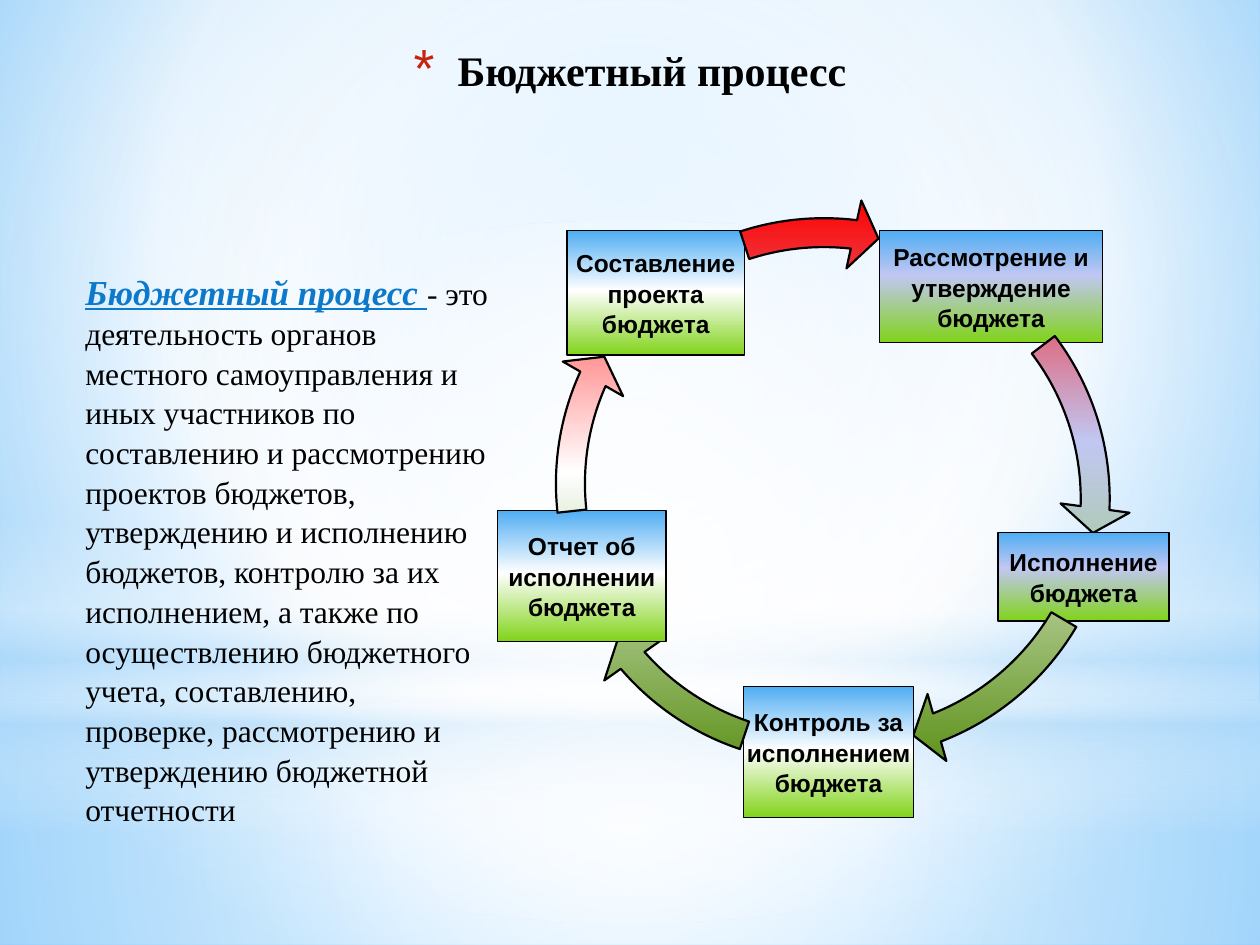
from dataclasses import dataclass

from lxml.etree import SubElement
from pptx import Presentation
from pptx.dml.color import RGBColor
from pptx.enum.shapes import MSO_SHAPE as Preset
from pptx.enum.text import MSO_ANCHOR as Anchor, MSO_AUTO_SIZE as AutoSize, PP_ALIGN as Align
from pptx.oxml.ns import qn
from pptx.util import Cm, Pt


@dataclass(frozen=True)
class Theme:
    serif: str = "Times New Roman"
    sans: str = "Arial"
    ink: str = "000000"
    accent: str = "0D79CA"
    bullet: str = "C3260C"
    title_size: int = 24
    term_size: int = 20
    body_size: int = 18
    label_size: int = 14
    # Gradient stops: position %, colour, optional opacity %
    page: tuple = ((0, "9ED5FF"), (60, "FFFFFF"), (100, "5BB9FF"))
    lower_glow: tuple = ((0, "FFFFFF", 91), (37, "FFFFFF", 76), (100, "B4DCFA", 79))
    upper_glow: tuple = ((0, "FFFFFF", 89), (48, "FFFFFF", 62), (100, "B4DCFA", 79))
    horizon: tuple = ((0, "FFFFFF", 0), (29, "FFFFFF", 30), (45, "B4DCFA", 40),
                      (55, "FFFFFF", 26), (65, "B4DCFA", 60), (100, "FFFFFF", 0))
    halo: tuple = ((0, "FFFFFF", 100), (56, "FFFFFF", 0))
    lilac_box: tuple = ((0, "4FADF3"), (40, "C1C7F2"), (100, "81D31A"))
    white_box: tuple = ((0, "4FADF3"), (48, "FFFFFF"), (100, "81D31A"))
    lilac_arrow: tuple = ((0, "FF0000"), (40, "C1C7F2"), (100, "81D31A"))
    white_arrow: tuple = ((0, "FF0000"), (40, "FFFFFF"), (100, "568D11"))
    pale_arrow: tuple = ((0, "FF0000"), (48, "FFFFFF"), (100, "568D11"))
    blue_arrow: tuple = ((0, "FF0000"), (49, "B4DCFA"), (100, "568D11"))


THEME = Theme()
CENTRE = (50, 50, 50, 50)
RING_SIZE = 11.68

# Label, box place, box fill, then the arrow to the next stage:
# ring corner, start and end angle in degrees, fill
STAGES = (
    ("Рассмотрение и утверждение бюджета", (17.73, 4.65, 4.5, 2.26), THEME.lilac_box,
     (11.1, 4.22), 322.79, 2.05, THEME.lilac_arrow),
    ("Исполнение бюджета", (20.12, 10.74, 3.45, 1.78), THEME.lilac_box,
     (11.18, 4.04), 30.54, 68.67, THEME.white_arrow),
    ("Контроль за исполнением бюджета", (14.99, 13.84, 3.43, 2.64), THEME.white_box,
     (10.8, 4.11), 108.51, 139.11, THEME.white_arrow),
    ("Отчет об исполнении бюджета", (10.03, 10.29, 3.4, 2.64), THEME.white_box,
     (10.8, 3.91), 173.8, 204.26, THEME.pale_arrow),
    ("Составление проекта бюджета", (11.43, 4.65, 3.58, 2.51), THEME.white_box,
     (10.77, 3.99), 251.91, 276.77, THEME.blue_arrow),
)

DEFINITION = (
    "- это деятельность органов местного самоуправления и иных участников по составлению "
    "и рассмотрению проектов бюджетов, утверждению и исполнению бюджетов, контролю за их "
    "исполнением, а также по осуществлению бюджетного учета, составлению, проверке, "
    "рассмотрению и утверждению бюджетной отчетности"
)


def paint_gradient(owner, fill, stops, focus=None):
    """Fill with stops: downwards, or round the focus rectangle (l, t, r, b in %)."""
    fill.gradient()
    gradient = next(owner.iter(qn("a:gradFill")))
    for child in list(gradient):
        gradient.remove(child)
    stop_list = SubElement(gradient, qn("a:gsLst"))
    for position, color, *opacity in stops:
        stop = SubElement(stop_list, qn("a:gs"), pos=str(position * 1000))
        tint = SubElement(stop, qn("a:srgbClr"), val=color)
        if opacity:
            SubElement(tint, qn("a:alpha"), val=str(opacity[0] * 1000))
    if focus:
        path = SubElement(gradient, qn("a:path"), path="circle")
        sides = {side: str(share * 1000) for side, share in zip("ltrb", focus)}
        SubElement(path, qn("a:fillToRect"), **sides)
    else:
        SubElement(gradient, qn("a:lin"), ang="5400000", scaled="0")


def add_gradient_shape(page, preset, place, stops, focus=None, line_width=None):
    shape = page.shapes.add_shape(preset, *map(Cm, place))
    shape.shadow.inherit = False
    paint_gradient(shape._element.spPr, shape.fill, stops, focus)
    if line_width:
        shape.line.color.rgb = RGBColor.from_string(THEME.ink)
        shape.line.width = Pt(line_width)
    else:
        shape.line.fill.background()
    return shape


def add_span(para, text, font, size, color=THEME.ink, bold=False, italic=False, underline=False):
    span = para.add_run()
    span.text = text
    span.font.name = font
    span.font.size = Pt(size)
    span.font.color.rgb = RGBColor.from_string(color)
    span.font.bold = bold
    span.font.italic = italic
    span.font.underline = underline


def add_backdrop(page):
    paint_gradient(page._element, page.background.fill, THEME.page, (20, 10, 20, 60))
    add_gradient_shape(page, Preset.RECTANGLE, (0, 14.17, 25.4, 4.88), THEME.lower_glow, CENTRE)
    add_gradient_shape(page, Preset.RECTANGLE, (0, 0, 25.4, 14.17), THEME.upper_glow, CENTRE)
    add_gradient_shape(page, Preset.RECTANGLE, (0, 10.46, 25.4, 6.35), THEME.horizon)
    add_gradient_shape(page, Preset.OVAL, (0, 4.45, 25.4, 14.17), THEME.halo, CENTRE)


def format_title(page, text):
    title = page.shapes.title
    page.shapes._spTree.append(title._element)  # in front of the backdrop
    title.left, title.top, title.width, title.height = map(Cm, (1.27, 0.76, 22.86, 1.98))
    frame = title.text_frame
    frame.vertical_anchor = Anchor.TOP
    frame.auto_size = AutoSize.NONE
    para = frame.paragraphs[0]
    para.alignment = Align.CENTER
    add_span(para, text, THEME.serif, THEME.title_size, bold=True)
    settings = para._p.get_or_add_pPr()
    settings.set("marL", str(Cm(0.89)))
    settings.set("indent", str(Cm(-0.89)))
    bullet_color = SubElement(settings, qn("a:buClr"))
    SubElement(bullet_color, qn("a:srgbClr"), val=THEME.bullet)
    SubElement(settings, qn("a:buSzPct"), val="128000")
    SubElement(settings, qn("a:buFont"), typeface=THEME.sans)
    SubElement(settings, qn("a:buChar"), char="*")


def add_stage_box(page, label, place, stops):
    box = add_gradient_shape(page, Preset.RECTANGLE, place, stops, line_width=0.75)
    frame = box.text_frame
    frame.word_wrap = True
    frame.vertical_anchor = Anchor.MIDDLE
    frame.margin_left = frame.margin_right = frame.margin_top = frame.margin_bottom = Cm(0.05)
    para = frame.paragraphs[0]
    para.alignment = Align.CENTER
    para.line_spacing = 1.04
    add_span(para, label, THEME.sans, THEME.label_size, bold=True)


def add_ring_arrow(page, corner, start, end, stops):
    place = (*corner, RING_SIZE, RING_SIZE)
    arrow = add_gradient_shape(page, Preset.CIRCULAR_ARROW, place, stops, line_width=1.25)
    per_degree = 0.6  # 60000 angle units to a degree, 100000 to an adjustment of 1
    values = (0.05, 5.6 * per_degree, end * per_degree, start * per_degree, 0.06)
    for index, value in enumerate(values):
        arrow.adjustments[index] = value


def add_definition(page):
    box = page.shapes.add_textbox(*map(Cm, (1.47, 5.28, 8.69, 11.71)))
    frame = box.text_frame
    frame.word_wrap = True
    frame.auto_size = AutoSize.SHAPE_TO_FIT_TEXT
    para = frame.paragraphs[0]
    para.line_spacing = 1.05
    add_span(para, "Бюджетный процесс ", THEME.serif, THEME.term_size, THEME.accent,
             bold=True, italic=True, underline=True)
    add_span(para, DEFINITION, THEME.serif, THEME.body_size)


def main():
    deck = Presentation()
    deck.slide_width, deck.slide_height = Cm(25.4), Cm(19.05)
    page = deck.slides.add_slide(deck.slide_layouts.get_by_name("Title Only"))
    add_backdrop(page)
    format_title(page, "Бюджетный процесс")
    for label, place, box_fill, corner, start, end, arrow_fill in STAGES:
        add_stage_box(page, label, place, box_fill)
        add_ring_arrow(page, corner, start, end, arrow_fill)
    add_definition(page)
    deck.save("out.pptx")


if __name__ == "__main__":
    main()
